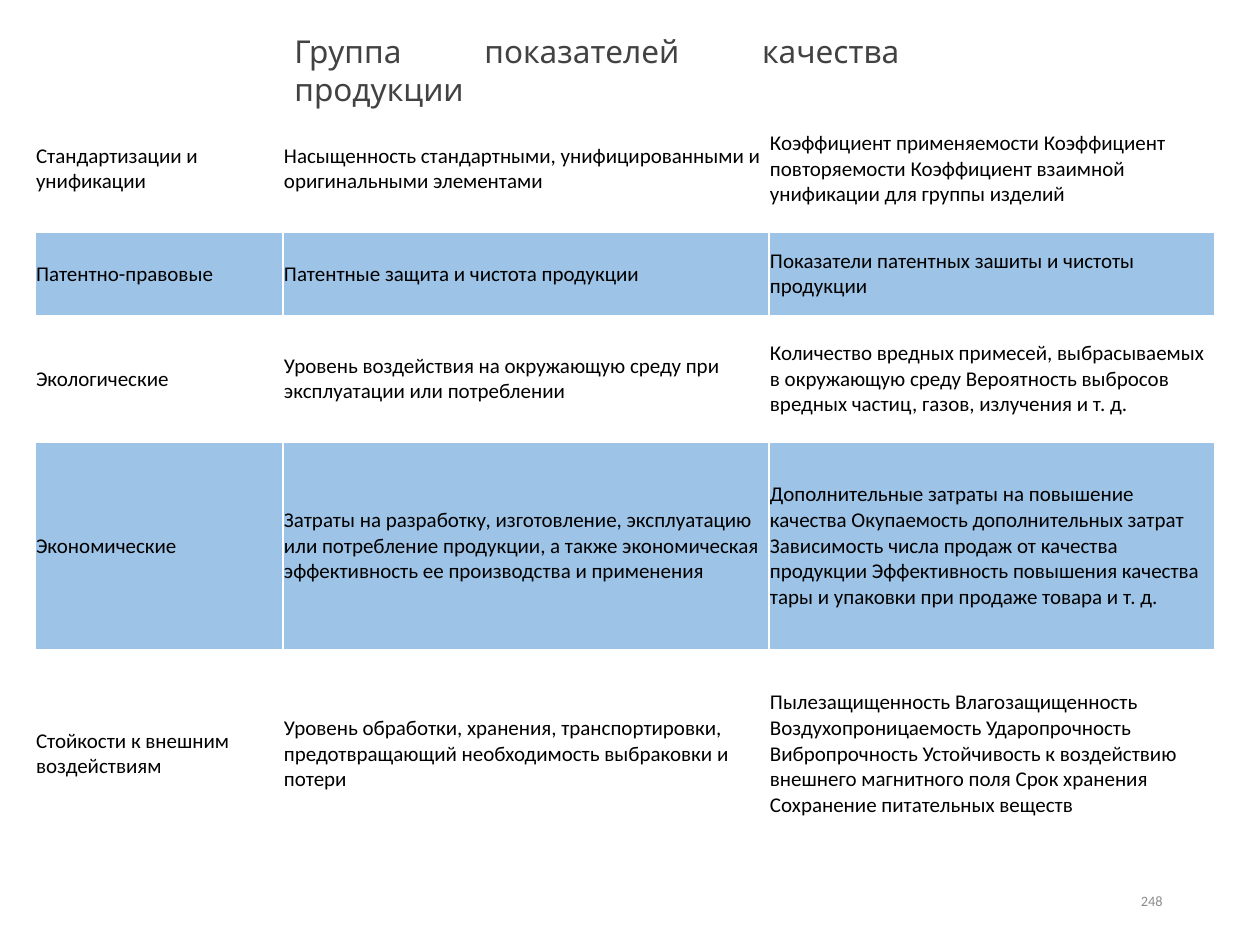
from pptx import Presentation
from pptx.dml.color import RGBColor
from pptx.enum.text import MSO_ANCHOR as Anchor, PP_ALIGN as Align
from pptx.util import Emu, Pt

PX = 914400 / 126
BLACK = RGBColor(0x00, 0x00, 0x00)
TITLE_GREY = RGBColor(0x42, 0x42, 0x42)
NUMBER_GREY = RGBColor(0x8C, 0x8C, 0x8C)
BAND_BLUE = RGBColor(0x9D, 0xC3, 0xE6)

COLUMN_WIDTHS = [248, 486, 446]
ROW_HEIGHTS = [126, 84, 126, 208, 208]
INDICATORS = [
    ("Стандартизации и унификации",
     "Насыщенность стандартными, унифицированными и оригинальными элементами",
     "Коэффициент применяемости Коэффициент повторяемости "
     "Коэффициент взаимной унификации для группы изделий"),
    ("Патентно-правовые",
     "Патентные защита и чистота продукции",
     "Показатели патентных зашиты и чистоты продукции"),
    ("Экологические",
     "Уровень воздействия на окружающую среду при эксплуатации или потреблении",
     "Количество вредных примесей, выбрасываемых в окружающую среду "
     "Вероятность выбросов вредных частиц, газов, излучения и т. д."),
    ("Экономические",
     "Затраты на разработку, изготовление, эксплуатацию или потребление продукции, "
     "а также экономическая эффективность ее производства и применения",
     "Дополнительные затраты на повышение качества Окупаемость дополнительных затрат "
     "Зависимость числа продаж от качества продукции "
     "Эффективность повышения качества тары и упаковки при продаже товара и т. д."),
    ("Стойкости к внешним воздействиям",
     "Уровень обработки, хранения, транспортировки, "
     "предотвращающий необходимость выбраковки и потери",
     "Пылезащищенность Влагозащищенность Воздухопроницаемость Ударопрочность "
     "Вибропрочность Устойчивость к воздействию внешнего магнитного поля "
     "Срок хранения Сохранение питательных веществ"),
]


def px(*lengths):
    """Turn pixel lengths into EMU."""
    return [Emu(round(length * PX)) for length in lengths]


def write(frame, text, font, size, color, align=Align.LEFT):
    frame.word_wrap = True
    paragraph = frame.paragraphs[0]
    paragraph.alignment = align
    run = paragraph.add_run()
    run.text = text
    for name, value in {"name": font, "size": Pt(size)}.items():
        setattr(run.font, name, value)
    run.font.color.rgb = color


prs = Presentation()
prs.slide_width, prs.slide_height = px(1260, 945)
slide = prs.slides.add_slide(prs.slide_layouts[6])

# Table of indicator groups, every second row banded
indicators = slide.shapes.add_table(
    len(ROW_HEIGHTS), len(COLUMN_WIDTHS),
    *px(35, 106, sum(COLUMN_WIDTHS), sum(ROW_HEIGHTS))).table
indicators.first_row = indicators.horz_banding = False
for column, width in zip(indicators.columns, px(*COLUMN_WIDTHS)):
    column.width = width
for row, height in zip(indicators.rows, px(*ROW_HEIGHTS)):
    row.height = height

inset, = px(1)
cell_format = {
    "vertical_anchor": Anchor.MIDDLE,
    "margin_left": inset, "margin_right": inset,
    "margin_top": inset, "margin_bottom": inset,
}
for r, texts in enumerate(INDICATORS):
    for c, text in enumerate(texts):
        cell = indicators.cell(r, c)
        for name, value in cell_format.items():
            setattr(cell, name, value)
        if r % 2:
            cell.fill.solid()
            cell.fill.fore_color.rgb = BAND_BLUE
        else:
            cell.fill.background()
        write(cell.text_frame, text, "Calibri", 12, BLACK)

# Title
title = slide.shapes.add_textbox(*px(282, 26, 630, 73)).text_frame
write(title, "Группа показателей качества продукции", "Cabin", 18, TITLE_GREY, Align.JUSTIFY)

# Slide number
number = slide.shapes.add_textbox(*px(891, 876, 284, 50)).text_frame
number.vertical_anchor = Anchor.MIDDLE
write(number, "248", "Calibri", 8.2, NUMBER_GREY, Align.RIGHT)

prs.save("out.pptx")
